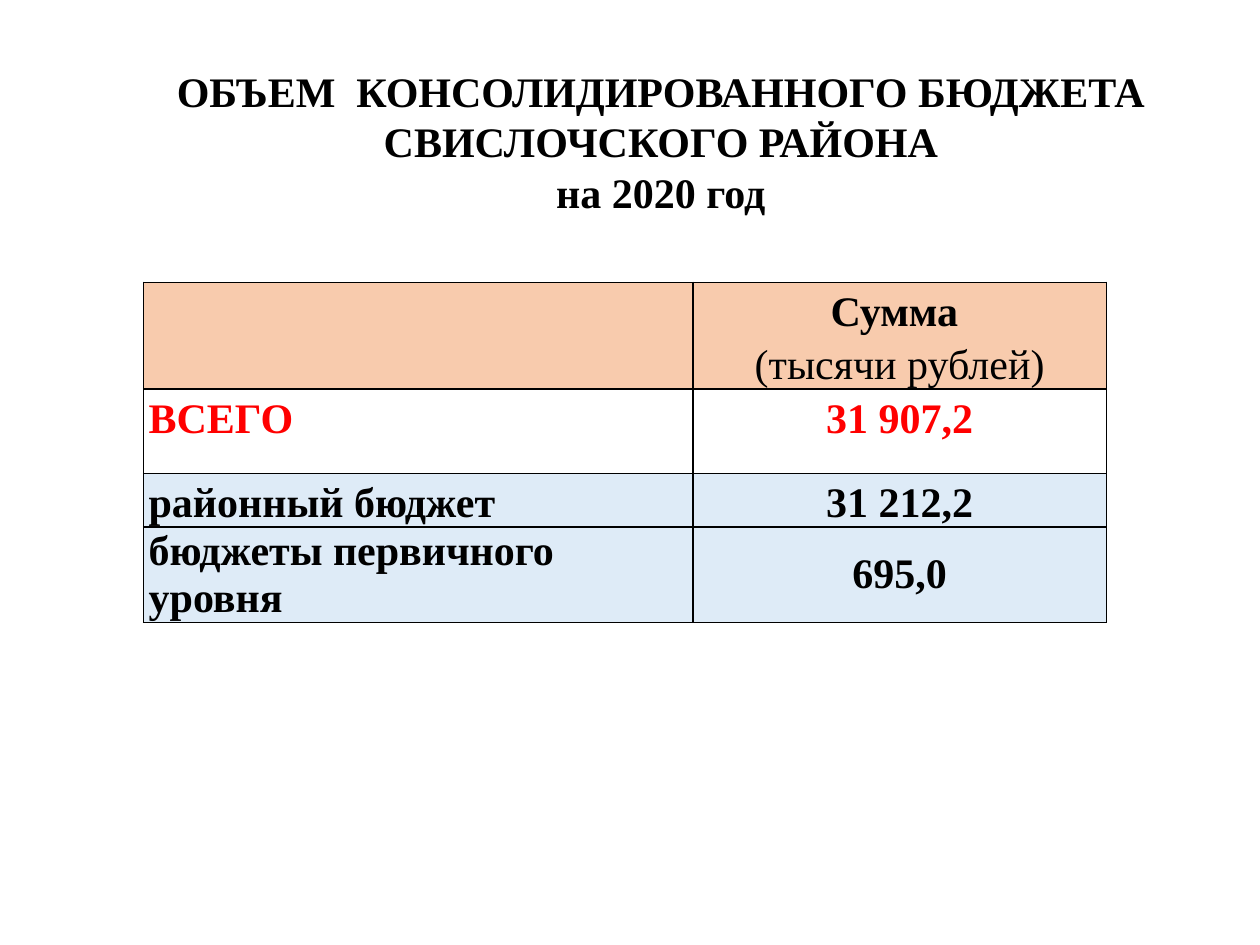
import pptx
import pptx.dml.color
import pptx.enum.text
import pptx.oxml
import pptx.oxml.ns
import pptx.util
from pptx.util import Inches

BLACK = pptx.dml.color.RGBColor(0x00, 0x00, 0x00)
RED = pptx.dml.color.RGBColor(0xFF, 0x00, 0x00)
PEACH = pptx.dml.color.RGBColor(0xF8, 0xCB, 0xAD)
PALE_BLUE = pptx.dml.color.RGBColor(0xDE, 0xEB, 0xF7)
CENTER = pptx.enum.text.PP_ALIGN.CENTER
LEFT = pptx.enum.text.PP_ALIGN.LEFT
TOP = pptx.enum.text.MSO_ANCHOR.TOP
MIDDLE = pptx.enum.text.MSO_ANCHOR.MIDDLE

TITLE = "ОБЪЕМ  КОНСОЛИДИРОВАННОГО БЮДЖЕТА\nСВИСЛОЧСКОГО РАЙОНА\nна 2020 год"
COLUMN_WIDTHS = (4.36, 3.28)
BUDGET_ROWS = (
    (("", "Сумма \n(тысячи рублей)"), 0.82, PEACH, BLACK, TOP, 1.15),
    (("ВСЕГО", "31 907,2"), 0.67, None, RED, TOP, 1.15),
    (("районный бюджет", "31 212,2"), 0.4, PALE_BLUE, BLACK, MIDDLE, 1.15),
    (("бюджеты первичного уровня", "695,0"), 0.76, PALE_BLUE, BLACK, MIDDLE, 1),
)


def style_para(para, color, alignment, bold=True):
    """Give a paragraph its alignment and its runs the slide's font."""
    para.alignment = alignment
    for span in para.runs:
        span.font.name = "Times New Roman"
        span.font.size = pptx.util.Pt(24)
        span.font.bold = bold
        span.font.color.rgb = color


def add_title(page, left, top, width, height):
    """Add the centred heading with first-line indents."""
    box = page.shapes.add_textbox(left, top, width, height)
    frame = box.text_frame
    frame.word_wrap = True
    frame.vertical_anchor = TOP
    frame.text = TITLE
    for para in frame.paragraphs:
        style_para(para, BLACK, CENTER)
        para._p.get_or_add_pPr().set("indent", str(Inches(0.49)))


def add_borders(cell):
    """Draw a one-point black line on each side of a cell."""
    properties = cell._tc.get_or_add_tcPr()
    for position, side in enumerate(("lnL", "lnR", "lnT", "lnB")):
        line = pptx.oxml.parse_xml(
            f'<a:{side} {pptx.oxml.ns.nsdecls("a")} w="{pptx.util.Pt(1)}">'
            f'<a:solidFill><a:srgbClr val="{BLACK}"/></a:solidFill></a:{side}>'
        )
        properties.insert(position, line)


def fill_cell(cell, text, fill, color, anchor, spacing, alignment):
    """Write one table cell and set its fill, margins and borders."""
    cell.text_frame.text = text
    cell.margin_left = cell.margin_right = Inches(0.04)
    cell.margin_top = cell.margin_bottom = 0
    cell.vertical_anchor = anchor
    if fill is None:
        cell.fill.background()
    else:
        cell.fill.solid()
        cell.fill.fore_color.rgb = fill
    for index, para in enumerate(cell.text_frame.paragraphs):
        style_para(para, color, alignment, bold=index == 0)
        para.line_spacing = float(spacing)
    add_borders(cell)


def add_budget_table(page, left, top, width, height):
    """Add the table of budget totals."""
    frame = page.shapes.add_table(
        len(BUDGET_ROWS), len(COLUMN_WIDTHS), left, top, width, height
    )
    table = frame.table
    table.first_row = table.horz_banding = False
    for column, column_width in zip(table.columns, COLUMN_WIDTHS):
        column.width = Inches(column_width)
    for row, (texts, row_height, *style) in zip(table.rows, BUDGET_ROWS):
        row.height = Inches(row_height)
        for cell, text, alignment in zip(row.cells, texts, (LEFT, CENTER)):
            fill_cell(cell, text, *style, alignment)


def main():
    """Build and save the slide."""
    deck = pptx.Presentation()
    deck.slide_width, deck.slide_height = Inches(10), Inches(7.5)
    page = deck.slides.add_slide(deck.slide_layouts[6])
    add_budget_table(page, Inches(1.14), Inches(2.24), Inches(7.64), Inches(2.65))
    add_title(page, Inches(0), Inches(0.47), Inches(10), Inches(1.62))
    deck.save("out.pptx")


if __name__ == "__main__":
    main()
